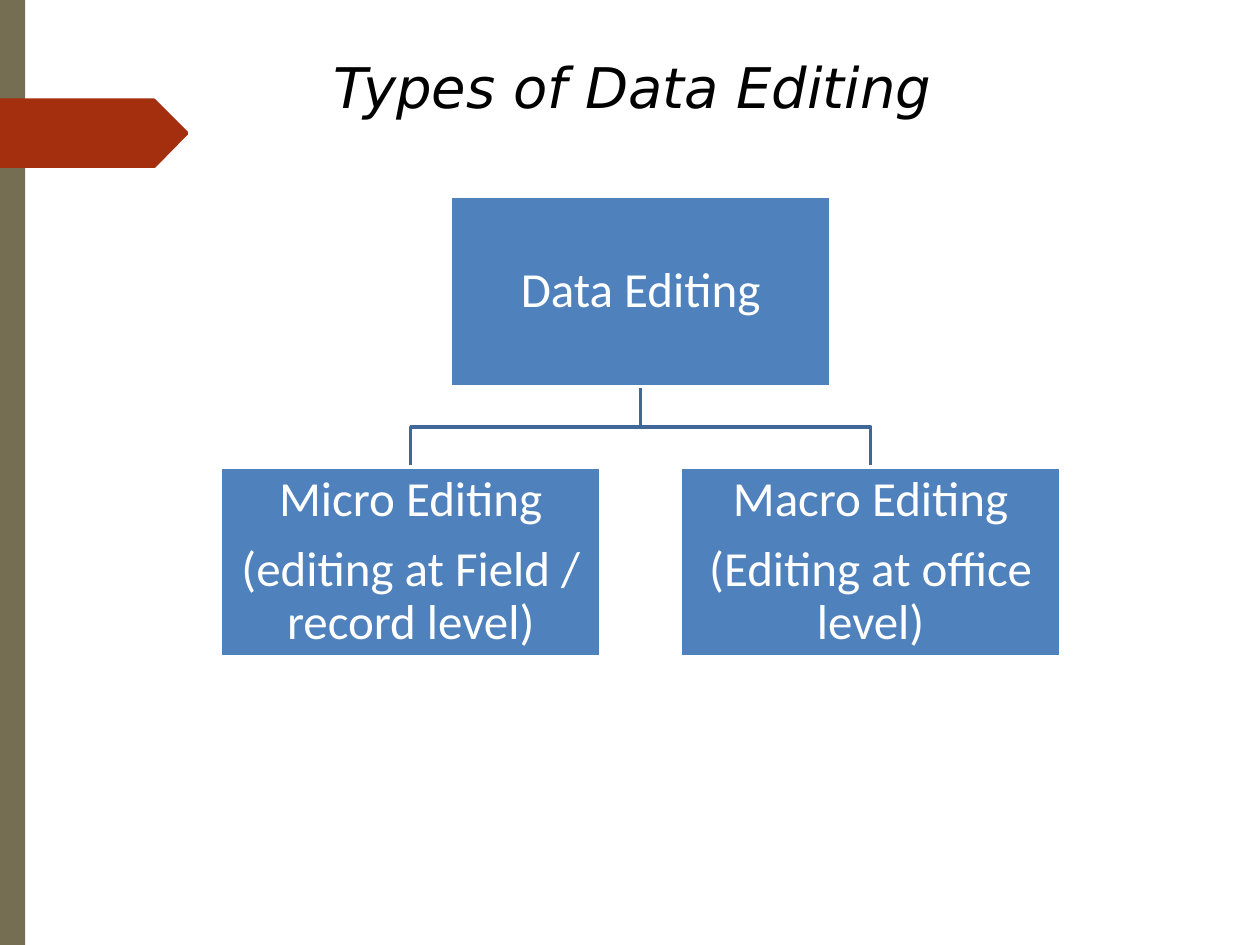
from pptx import Presentation
from pptx.dml.color import RGBColor
from pptx.enum.shapes import MSO_SHAPE
from pptx.enum.text import MSO_ANCHOR, PP_ALIGN
from pptx.util import Pt

TITLE = "Types of Data Editing"
ROOT = ["Data Editing"]
CHILDREN = [
    ["Micro Editing", "(editing at Field / record level)"],
    ["Macro Editing", "(Editing at office level)"],
]
RIBBON = [
    (0, 56.2), (0, 96), (88.6, 96), (107.3, 76.9),
    (107.3, 75.2), (89, 56.9), (88, 56.2),
]

SLIDE_WIDTH, SLIDE_HEIGHT = 720, 540
BOX_WIDTH, BOX_HEIGHT = 217.2, 108.6
ROOT_CENTER, ROOT_TOP = 366.1, 112.4
CHILD_TOP, CHILD_PITCH = 267, 262.8


def color(hex_value):
    return RGBColor.from_string(hex_value)


def write_text(shape, lines, *, size, font, hex_value, italic=False, anchor=MSO_ANCHOR.TOP,
               inset=0, line_spacing=None, space_after=None):
    frame = shape.text_frame
    frame.word_wrap = True
    frame.vertical_anchor = anchor
    frame.margin_left = frame.margin_right = Pt(inset)
    frame.margin_top = frame.margin_bottom = Pt(inset)
    for index, line in enumerate(lines):
        paragraph = frame.paragraphs[0] if index == 0 else frame.add_paragraph()
        paragraph.text = line
        paragraph.alignment = PP_ALIGN.CENTER
        paragraph.line_spacing = line_spacing
        if space_after is not None:
            paragraph.space_after = Pt(space_after)
        paragraph.font.size = Pt(size)
        paragraph.font.name = font
        paragraph.font.italic = italic
        paragraph.font.color.rgb = color(hex_value)


def paint(shape, fill=None, line=None):
    shape.shadow.inherit = False
    if fill:
        shape.fill.solid()
        shape.fill.fore_color.rgb = color(fill)
    else:
        shape.fill.background()
    if line:
        shape.line.color.rgb = color(line)
        shape.line.width = Pt(2)
    else:
        shape.line.fill.background()


def add_outline(slide, points, close=True, **colors):
    start, *rest = [(Pt(x), Pt(y)) for x, y in points]
    builder = slide.shapes.build_freeform(*start)
    builder.add_line_segments(rest, close=close)
    paint(builder.convert_to_shape(), **colors)


def add_box(slide, center, top, lines):
    box = slide.shapes.add_shape(MSO_SHAPE.RECTANGLE, Pt(center - BOX_WIDTH / 2), Pt(top),
                                 Pt(BOX_WIDTH), Pt(BOX_HEIGHT))
    paint(box, fill="4F81BD", line="FFFFFF")
    write_text(box, lines, size=28, font="Calibri", hex_value="FFFFFF",
               anchor=MSO_ANCHOR.MIDDLE, inset=1.4, line_spacing=0.9, space_after=9.8)


def main():
    presentation = Presentation()
    presentation.slide_width = Pt(SLIDE_WIDTH)
    presentation.slide_height = Pt(SLIDE_HEIGHT)
    slide = presentation.slides.add_slide(presentation.slide_layouts[6])

    side_bar = slide.shapes.add_shape(MSO_SHAPE.RECTANGLE, 0, 0, Pt(14.4), Pt(SLIDE_HEIGHT))
    paint(side_bar, fill="756E53")
    add_outline(slide, RIBBON, fill="A42F0F")

    title = slide.shapes.add_textbox(Pt(72), Pt(30.2), Pt(579.6), Pt(38.9))
    write_text(title, [TITLE], size=32, font="DejaVu Sans", hex_value="000000", italic=True)

    middle = (len(CHILDREN) - 1) / 2
    centers = [ROOT_CENTER + (index - middle) * CHILD_PITCH for index in range(len(CHILDREN))]
    root_bottom = ROOT_TOP + BOX_HEIGHT
    branch_level = (root_bottom + CHILD_TOP) / 2
    for center in centers:
        branch = [(ROOT_CENTER, root_bottom), (ROOT_CENTER, branch_level),
                  (center, branch_level), (center, CHILD_TOP)]
        add_outline(slide, branch, close=False, line="3F6797")

    add_box(slide, ROOT_CENTER, ROOT_TOP, ROOT)
    for center, lines in zip(centers, CHILDREN):
        add_box(slide, center, CHILD_TOP, lines)

    presentation.save("out.pptx")


if __name__ == "__main__":
    main()
